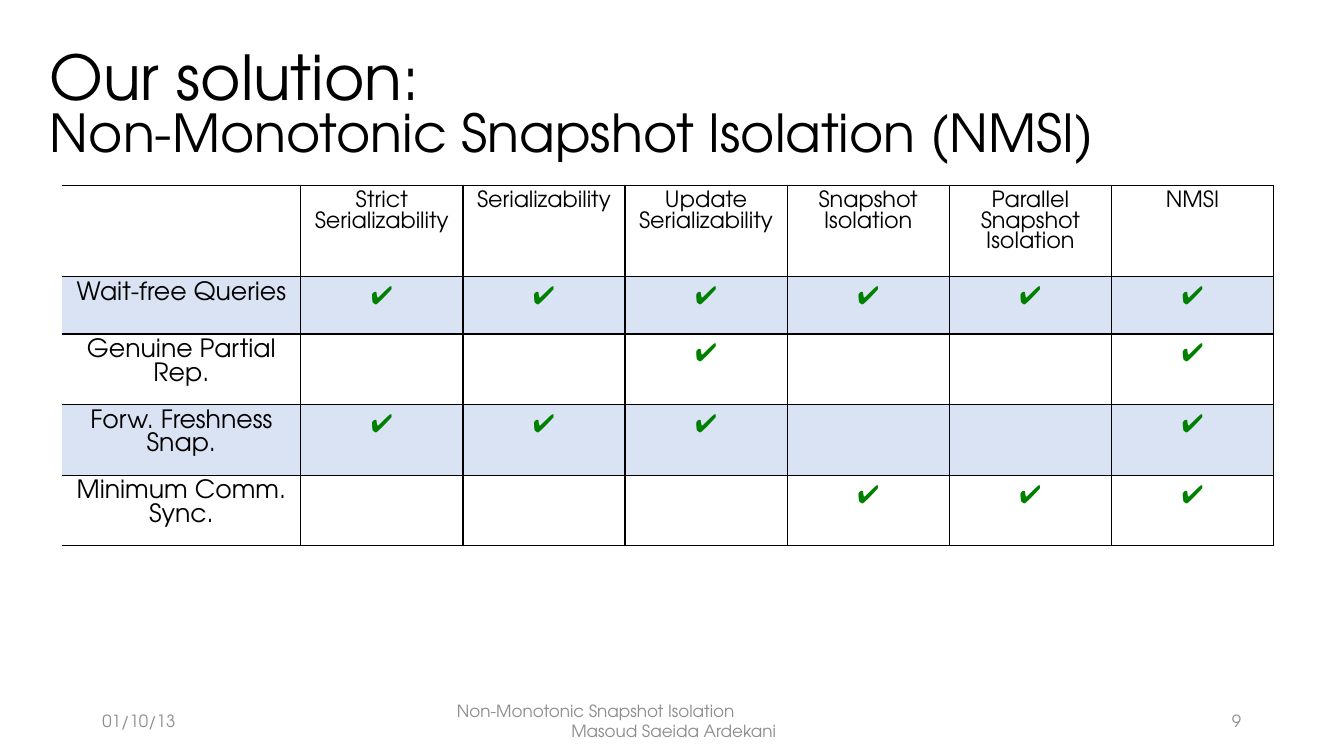
import pptx
import pptx.dml.color
import pptx.enum.text
import pptx.oxml
import pptx.oxml.ns
import pptx.util

Cm = pptx.util.Cm
Pt = pptx.util.Pt
ALIGN = pptx.enum.text.PP_ALIGN
FACE = "TeX Gyre Adventor"
BLACK, GREEN, GREY, BAND, WHITE = "000000", "008000", "8C8C8C", "DAE3F3", "FFFFFF"
HEADS = ["", "Strict\nSerializability", "Serializability", "Update\nSerializability",
         "Snapshot\nIsolation", "Parallel\nSnapshot Isolation", "NMSI"]
ROWS = [("Wait-free Queries", "123456"), ("Genuine Partial Rep.", "36"),
        ("Forw. Freshness Snap.", "1236"), ("Minimum Comm. Sync.", "456")]
HIGHS = [1.78, 1.45, 1.55, 1.55, 1.55]


def color(code):
    """Turn a hex string into a colour."""
    return pptx.dml.color.RGBColor.from_string(code)


def style(font, size, code, face=FACE, bold=False):
    """Set the look of a font."""
    font.size, font.name, font.bold = Pt(size), face, bold
    font.color.rgb = color(code)


def frame(slide, box):
    """Add a wrapping, middle-anchored text box and return its frame."""
    text = slide.shapes.add_textbox(*map(Cm, box)).text_frame
    text.word_wrap = True
    text.vertical_anchor = pptx.enum.text.MSO_ANCHOR.MIDDLE
    return text


def title(slide, box):
    """Write the two-line title."""
    para = frame(slide, box).paragraphs[0]
    para.line_spacing = 0.8
    style(para.font, 44.2, BLACK)
    para.add_run().text = "Our solution:"
    para.add_line_break()
    run = para.add_run()
    run.text = "Non-Monotonic Snapshot Isolation (NMSI)"
    run.font.size = Pt(37.4)


def edge(cell, first):
    """Rule a cell in black, leaving the table's left side open."""
    props = cell._tc.get_or_add_tcPr()
    for side in "LRTB":
        paint = "<a:noFill/>" if first and side == "L" else (
            f'<a:solidFill><a:srgbClr val="{BLACK}"/></a:solidFill>')
        props.append(pptx.oxml.parse_xml(
            f'<a:ln{side} {pptx.oxml.ns.nsdecls("a")} w="{Pt(1)}">{paint}</a:ln{side}>'))


def grid(slide, box):
    """Build the table of criteria and their properties."""
    left, top, width, lead = box
    table = slide.shapes.add_table(len(HIGHS), len(HEADS), Cm(left), Cm(top),
                                   Cm(width), Cm(sum(HIGHS))).table
    table.first_row = table.horz_banding = False
    for col, part in enumerate(table.columns):
        part.width = Cm(lead if col == 0 else (width - lead) / (len(HEADS) - 1))
    lines = [HEADS] + [[name] + ["✔" if str(col) in marks else ""
                                 for col in range(1, len(HEADS))] for name, marks in ROWS]
    for row, words in enumerate(lines):
        table.rows[row].height = Cm(HIGHS[row])
        for col, word in enumerate(words):
            cell = table.cell(row, col)
            edge(cell, col == 0)
            cell.fill.solid()
            cell.fill.fore_color.rgb = color(BAND if row % 2 else WHITE)
            cell.text = word
            for para in cell.text_frame.paragraphs:
                para.alignment = ALIGN.CENTER
                if row and col:
                    style(para.font, 18, GREEN, "Arial", True)
                else:
                    style(para.font, 18 if row else 16, BLACK)


def note(slide, box, lines):
    """Write a footer field from pairs of text and alignment."""
    text = frame(slide, box)
    text.text = "\n".join(word for word, _ in lines)
    for para, (_, align) in zip(text.paragraphs, lines):
        para.alignment = align
        style(para.font, 12, GREY)


def foot(slide, box):
    """Place date, talk name and page number along the bottom."""
    left, top, width, high = box
    side, wide = 7.62, 11.43
    note(slide, (left, top, side, high), [("01/10/13", ALIGN.LEFT)])
    note(slide, (left + (width - wide) / 2 + 0.05, top, wide, high),
         [("Non-Monotonic Snapshot Isolation", ALIGN.LEFT),
          ("Masoud Saeida Ardekani", ALIGN.CENTER)])
    note(slide, (left + width - side, top, side, high), [("9", ALIGN.RIGHT)])


def main():
    """Build the slide and save it."""
    deck = pptx.Presentation()
    deck.slide_width, deck.slide_height = Cm(33.87), Cm(19.05)
    slide = deck.slides.add_slide(deck.slide_layouts[6])
    title(slide, (1, 0.88, 29.2, 3.68))
    grid(slide, (1.56, 4.68, 30.54, 6.02))
    foot(slide, (2.33, 17.66, 29.2, 1.01))
    deck.save("out.pptx")


if __name__ == "__main__":
    main()
